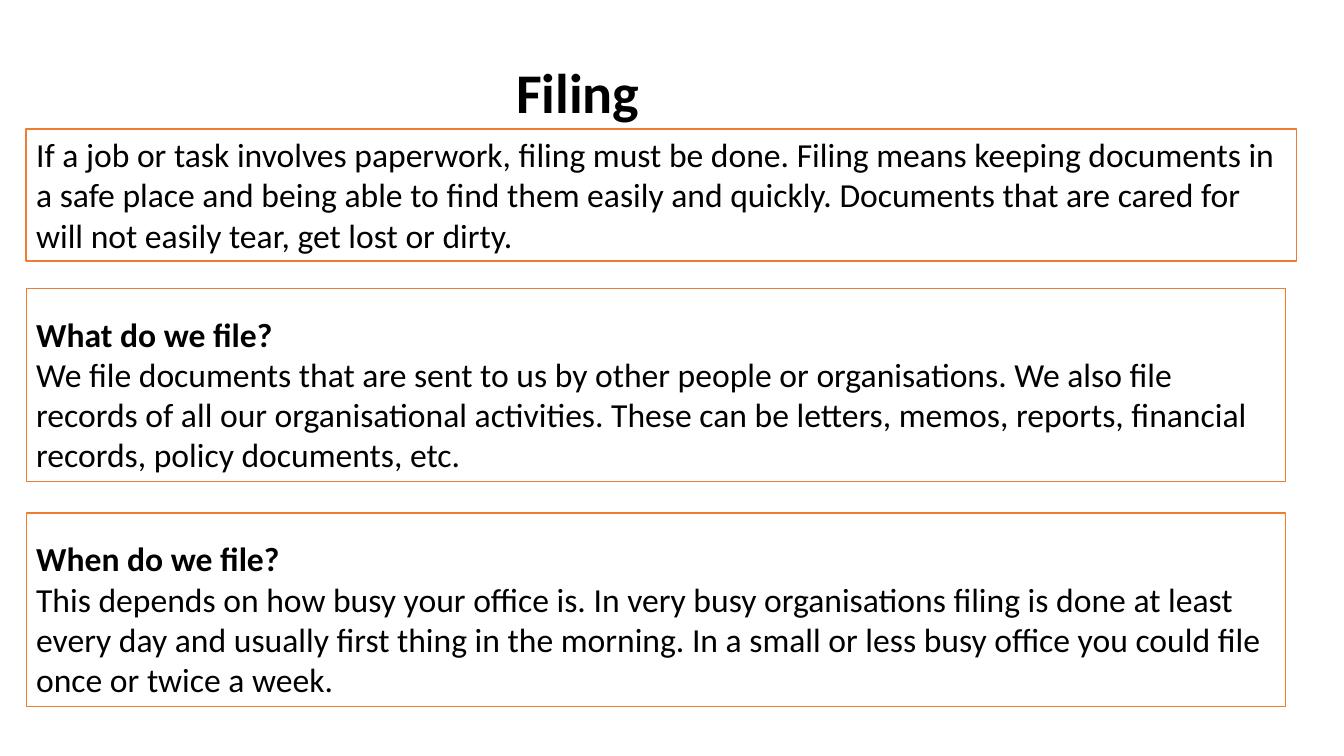
from pptx import Presentation
from pptx.dml.color import RGBColor
from pptx.enum import shapes, text

EMU_PER_PX = 9144
COLOURS = {"ink": "000000", "paper": "FFFFFF", "border": "ED7D31"}
INTRO = (
    "If a job or task involves paperwork, filing must be done. Filing means keeping "
    "documents in a safe place and being able to find them easily and quickly. "
    "Documents that are cared for will not easily tear, get lost or dirty."
)
WHAT = (
    "We file documents that are sent to us by other people or organisations. We also "
    "file records of all our organisational activities. These can be letters, memos, "
    "reports, financial records, policy documents, etc."
)
WHEN = (
    "This depends on how busy your office is. In very busy organisations filing is done "
    "at least every day and usually first thing in the morning. In a small or less busy "
    "office you could file once or twice a week."
)


def px(*lengths):
    """Turn pixel lengths into EMU."""
    return [length * EMU_PER_PX for length in lengths]


def colour(name):
    """Look up a named colour."""
    return RGBColor.from_string(COLOURS[name])


def prepare_frame(frame):
    """Wrap the text from the top and let its box grow."""
    frame.word_wrap = True
    frame.auto_size = text.MSO_AUTO_SIZE.SHAPE_TO_FIT_TEXT
    frame.vertical_anchor = text.MSO_ANCHOR.TOP


def write(paragraph, wording, size, heading=False):
    """Write a heading or body paragraph."""
    paragraph.text = wording
    paragraph.alignment = text.PP_ALIGN.JUSTIFY if heading else text.PP_ALIGN.LEFT
    if heading:
        paragraph.line_spacing = 1.5
    font = paragraph.font
    font.name = "Calibri"
    font.size = size * 12700
    font.bold = heading
    font.color.rgb = colour("ink")


def add_title(slide, wording):
    """Add the slide title."""
    frame = slide.shapes.add_textbox(*px(502, 19, 667, 101)).text_frame
    prepare_frame(frame)
    write(frame.paragraphs[0], wording, 40, heading=True)


def add_panel(slide, top, width, height, body, heading=None):
    """Add a bordered panel with an optional heading above its body."""
    panel = slide.shapes.add_shape(
        shapes.MSO_SHAPE.RECTANGLE, *px(26, top, width, height)
    )
    panel.shadow.inherit = False
    panel.fill.solid()
    panel.fill.fore_color.rgb = colour("paper")
    panel.line.color.rgb = colour("border")
    panel.line.width = 12700
    frame = panel.text_frame
    prepare_frame(frame)
    paragraph = frame.paragraphs[0]
    if heading:
        write(paragraph, heading, 24, heading=True)
        paragraph = frame.add_paragraph()
    write(paragraph, body, 24)


def main():
    """Build the filing slide."""
    deck = Presentation()
    deck.slide_width, deck.slide_height = px(1333, 750)
    slide = deck.slides.add_slide(deck.slide_layouts[6])
    add_title(slide, "Filing")
    add_panel(slide, 128, 1260, 131, INTRO)
    questions = [("What do we file?", WHAT), ("When do we file?", WHEN)]
    for index, (question, answer) in enumerate(questions):
        add_panel(slide, 286 + 223 * index, 1249, 192, answer, question)
    deck.save("out.pptx")


if __name__ == "__main__":
    main()
